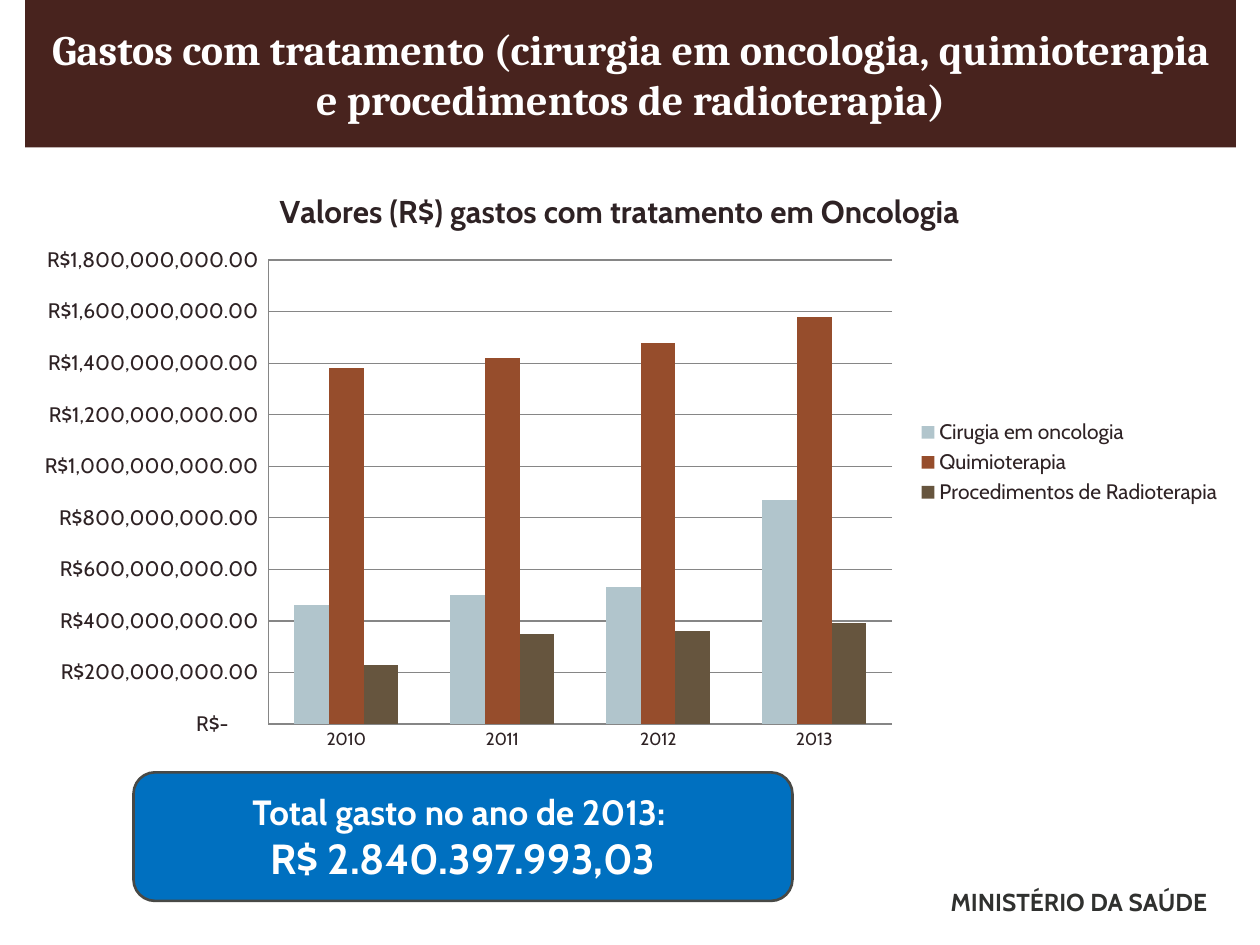
from lxml.etree import SubElement
from pptx import Presentation
from pptx.chart.data import CategoryChartData
from pptx.dml.color import RGBColor
from pptx.enum.chart import XL_CHART_TYPE as ChartType, XL_LEGEND_POSITION as LegendPosition
from pptx.enum.chart import XL_TICK_MARK as TickMark
from pptx.enum.shapes import MSO_SHAPE as Shape
from pptx.enum.text import MSO_ANCHOR as Anchor, PP_ALIGN as Align
from pptx.oxml.ns import qn
from pptx.util import Inches, Pt

# Content
COLORS = {"banner": "48231E", "total": "0070C0", "border": "484946", "white": "FFFFFF",
          "text": "2E2224", "footer": "30312F", "grid": "868686",
          "surgery": "B1C5CC", "chemo": "964D2C", "radio": "66553E"}
TITLE = [("Gastos com tratamento (cirurgia em oncologia, quimioterapia "
          "e procedimentos de radioterapia)", 24)]
TOTAL = [("Total gasto no ano de 2013: ", 20), ("R$ 2.840.397.993,03", 24)]
FOOTER = [("MINISTÉRIO DA SAÚDE", 14)]
CHART_TITLE = "Valores (R$) gastos com tratamento em Oncologia "
YEARS = ["2010", "2011", "2012", "2013"]
SERIES = [  # name, colour, millions of reais
    ("Cirugia em oncologia", "surgery", [460, 500, 530, 870]),
    ("Quimioterapia", "chemo", [1380, 1420, 1480, 1580]),
    ("Procedimentos de Radioterapia", "radio", [230, 350, 360, 390]),
]
MILLION = 1_000_000
CURRENCY = r'_("R$"* #,##0.00_);_("R$"* \(#,##0.00\);_("R$"* "-"??_);_(@_)'
PLOT_AREA = {"x": 0.21, "y": 0.16, "w": 0.51, "h": 0.78}


def color(name):
    return RGBColor.from_string(COLORS[name])


def style_font(font, size, color_name="text", name="Cabin", bold=False):
    values = {"size": Pt(size), "name": name, "bold": bold}
    for attribute, value in values.items():
        setattr(font, attribute, value)
    font.color.rgb = color(color_name)


def write(shape, lines, color_name, font_name="Cabin", align=Align.CENTER):
    frame = shape.text_frame
    frame.word_wrap = True
    frame.vertical_anchor = Anchor.MIDDLE
    for index, (text, size) in enumerate(lines):
        paragraph = frame.add_paragraph() if index else frame.paragraphs[0]
        paragraph.alignment = align
        run = paragraph.add_run()
        run.text = text
        style_font(run.font, size, color_name, font_name, True)


def add_box(slide, kind, box, fill, border=None):
    shape = slide.shapes.add_shape(kind, *map(Inches, box))
    shape.shadow.inherit = False
    shape.fill.solid()
    shape.fill.fore_color.rgb = color(fill)
    if border:
        shape.line.color.rgb = color(border)
        shape.line.width = Pt(1.5)
    else:
        shape.line.fill.background()
    return shape


def place_plot(chart):
    plot_area = chart.plots[0]._element.getparent()
    for old in plot_area.findall(qn("c:layout")):
        plot_area.remove(old)
    layout = SubElement(plot_area, qn("c:layout"))
    plot_area.insert(0, layout)
    manual = SubElement(layout, qn("c:manualLayout"))
    settings = {"layoutTarget": "inner", "xMode": "edge", "yMode": "edge", **PLOT_AREA}
    for tag, value in settings.items():
        SubElement(manual, qn("c:" + tag)).set("val", str(value))


def add_spending_chart(slide, box):
    data = CategoryChartData(number_format=CURRENCY)
    data.categories = YEARS
    for name, _, millions in SERIES:
        data.add_series(name, [value * MILLION for value in millions])
    chart = slide.shapes.add_chart(ChartType.COLUMN_CLUSTERED, *map(Inches, box), data).chart
    style_font(chart.font, 10)

    # Title and legend
    chart.has_title = True
    title = chart.chart_title
    title.include_in_layout = False
    run = title.text_frame.paragraphs[0].add_run()
    run.text = CHART_TITLE
    style_font(run.font, 18, bold=True)
    chart.has_legend = True
    chart.legend.position = LegendPosition.RIGHT
    chart.legend.include_in_layout = False
    style_font(chart.legend.font, 12)

    # Axes
    for axis, size in ((chart.category_axis, 10), (chart.value_axis, 12)):
        axis.major_tick_mark = axis.minor_tick_mark = TickMark.NONE
        axis.format.line.color.rgb = color("grid")
        style_font(axis.tick_labels.font, size)
    value_axis = chart.value_axis
    value_axis.minimum_scale = 0
    value_axis.maximum_scale = 1800 * MILLION
    value_axis.major_unit = 200 * MILLION
    value_axis.has_major_gridlines = True
    value_axis.major_gridlines.format.line.color.rgb = color("grid")
    value_axis.tick_labels.number_format = CURRENCY
    value_axis.tick_labels.number_format_is_linked = False

    # Columns
    plot = chart.plots[0]
    plot.gap_width = 150
    plot.overlap = 0
    plot.vary_by_categories = False
    for series, (_, color_name, _) in zip(plot.series, SERIES):
        series.format.fill.solid()
        series.format.fill.fore_color.rgb = color(color_name)
    place_plot(chart)


def main():
    presentation = Presentation()
    presentation.slide_width, presentation.slide_height = Inches(10), Inches(7.5)
    slide = presentation.slides.add_slide(presentation.slide_layouts[6])

    # Title banner
    banner = add_box(slide, Shape.RECTANGLE, (0.2, 0, 9.61, 1.17), "banner")
    write(banner, TITLE, "white", "Cambria")

    # Total spent
    total = add_box(slide, Shape.ROUNDED_RECTANGLE, (1.06, 6.13, 5.23, 1.02), "total", "border")
    write(total, TOTAL, "white")

    add_spending_chart(slide, (0.09, 1.31, 9.71, 4.72))

    # Footer
    footer = slide.shapes.add_textbox(*map(Inches, (6.64, 6.99, 3.04, 0.34)))
    write(footer, FOOTER, "footer", align=Align.RIGHT)

    presentation.save("out.pptx")


if __name__ == "__main__":
    main()
